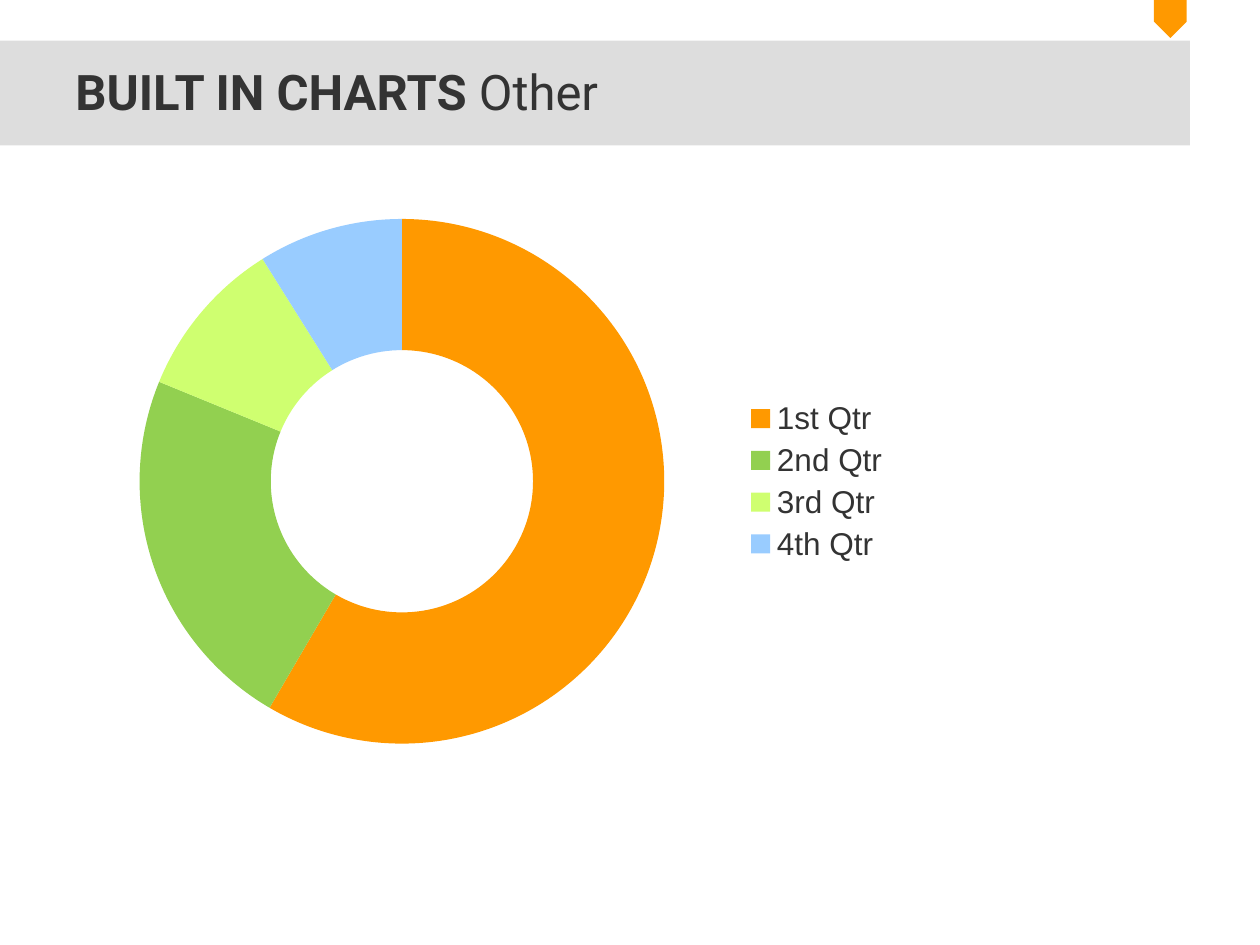
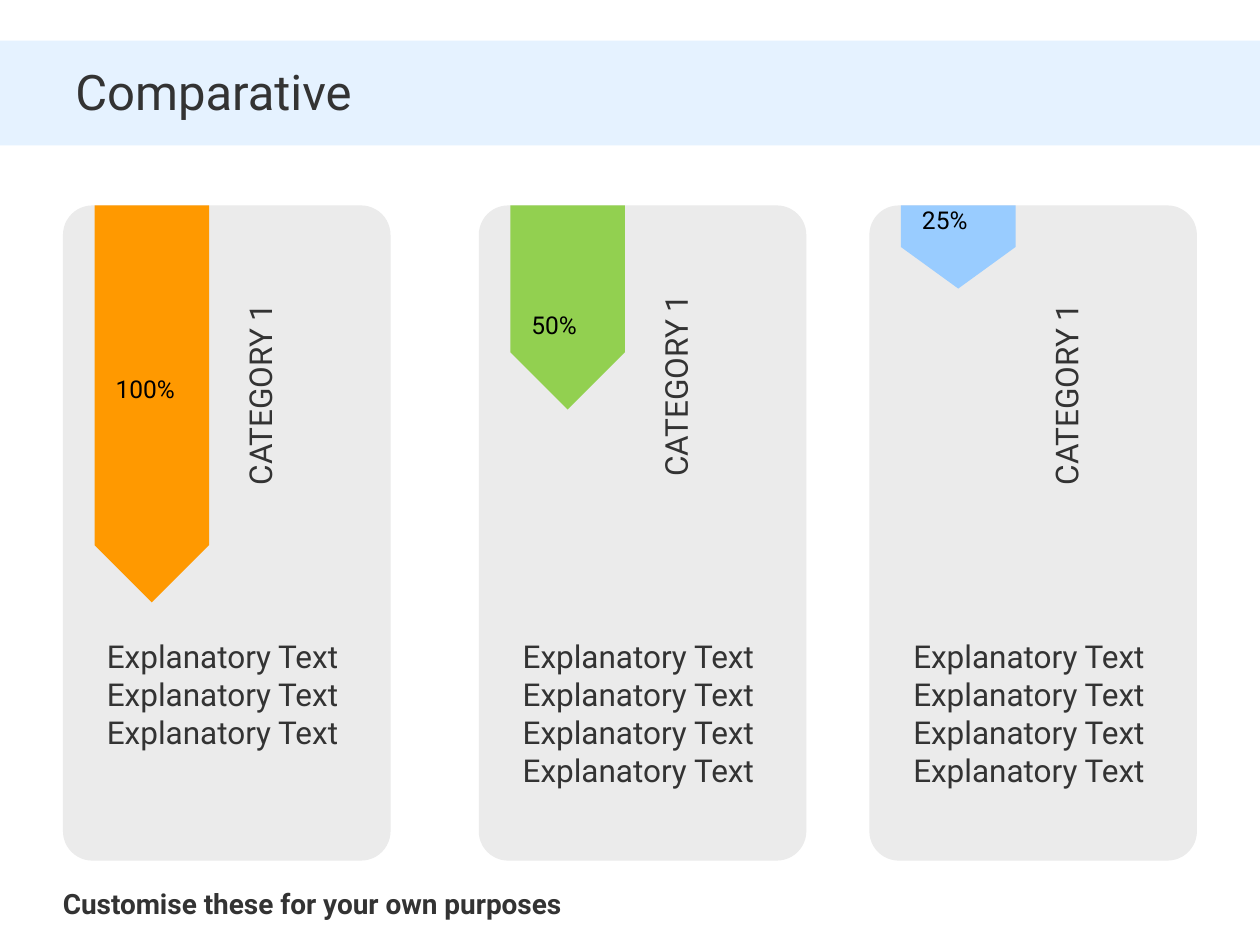
from dataclasses import dataclass

import pptx
import pptx.chart.data
import pptx.dml.color
import pptx.enum.chart
import pptx.enum.shapes
import pptx.oxml.ns
import pptx.util
from lxml import etree

Pt = pptx.util.Pt
SHAPE = pptx.enum.shapes.MSO_SHAPE

COLORS = {
    "text": "333333",
    "label": "000000",
    "band": "DDDDDD",
    "card": "EBEBEB",
    "orange": "FF9900",
    "green": "92D050",
    "lime": "CFFF70",
    "blue": "99CCFF",
}
FORMATS = {
    "title": {"name": "Roboto", "size": Pt(28)},
    "body": {"name": "Roboto", "size": Pt(18)},
    "percent": {"name": "Roboto", "size": Pt(14)},
    "note": {"name": "Roboto", "size": Pt(16), "bold": True},
    "legend": {"name": "Arial", "size": Pt(18)},
}
SLIDE_W, SLIDE_H = 720, 540
CARD_TOP, CARD_W, CARD_H = 117.4, 187.2, 374.4
ARROW_W = 65.5
EXPLANATION = "Explanatory Text"


@dataclass
class Box:
    x: float
    y: float
    w: float
    h: float

    def lengths(self) -> list:
        return [Pt(v) for v in (self.x, self.y, self.w, self.h)]


@dataclass
class Run:
    text: str
    bold: bool = False


@dataclass
class Card:
    x: float
    percent: str
    percent_y: float
    category_y: float
    arrow_len: float
    color: str
    lines: list[str]


@dataclass
class Slice:
    name: str
    value: float
    color: str


CARDS = [
    Card(36, "100%", 210.2, 182.2, 226.8, "orange", [EXPLANATION] * 3),
    Card(273.6, "50%", 173.5, 177.1, 116.6, "green",
         [f"{EXPLANATION} {EXPLANATION}", EXPLANATION, EXPLANATION]),
    Card(496.8, "25%", 113.8, 182.2, 47.5, "blue",
         [f"{EXPLANATION} {EXPLANATION}", EXPLANATION, EXPLANATION]),
]
SLICES = [
    Slice("1st Qtr", 59, "orange"),
    Slice("2nd Qtr", 23, "green"),
    Slice("3rd Qtr", 10, "lime"),
    Slice("4th Qtr", 9, "blue"),
]


def rgb(color: str) -> pptx.dml.color.RGBColor:
    return pptx.dml.color.RGBColor.from_string(COLORS[color])


def format_font(font, style: str, color: str = "text") -> None:
    for key, value in FORMATS[style].items():
        setattr(font, key, value)
    font.color.rgb = rgb(color)


def add_filled(s, kind, box: Box, color: str):
    sp = s.shapes.add_shape(kind, *box.lengths())
    sp.shadow.inherit = False
    sp.fill.solid()
    sp.fill.fore_color.rgb = rgb(color)
    sp.line.fill.background()
    return sp


def add_down_arrow(s, x: float, y: float, width: float, length: float, color: str) -> None:
    box = Box(x + (width - length) / 2, y + (length - width) / 2, length, width)
    add_filled(s, SHAPE.PENTAGON, box, color).rotation = 90


def add_text(s, box: Box, lines: list[str], style: str, color: str = "text"):
    sp = s.shapes.add_textbox(*box.lengths())
    tf = sp.text_frame
    tf.word_wrap = True
    for i, line in enumerate(lines):
        p = tf.paragraphs[0] if i == 0 else tf.add_paragraph()
        r = p.add_run()
        r.text = line
        format_font(r.font, style, color)
    return sp


def add_header(s, runs: list[Run], width: float, color: str, alpha: int = 100) -> None:
    band = add_filled(s, SHAPE.RECTANGLE, Box(0, 23.3, width, 59.8), color)
    if alpha < 100:
        clr = band.fill._xPr.find(".//" + pptx.oxml.ns.qn("a:srgbClr"))
        etree.SubElement(clr, pptx.oxml.ns.qn("a:alpha"), val=str(alpha * 1000))
    sp = s.shapes.add_textbox(*Box(36, 31.7, 648, 80).lengths())
    tf = sp.text_frame
    tf.word_wrap = True
    for run in runs:
        r = tf.paragraphs[0].add_run()
        r.text = run.text
        format_font(r.font, "title")
        r.font.bold = run.bold


def add_doughnut(s, box: Box, slices: list[Slice]) -> None:
    data = pptx.chart.data.CategoryChartData()
    data.categories = [item.name for item in slices]
    data.add_series("Series 1", [item.value for item in slices])
    chart = s.shapes.add_chart(
        pptx.enum.chart.XL_CHART_TYPE.DOUGHNUT, *box.lengths(), data).chart
    chart.has_title = False
    chart.has_legend = True
    chart.legend.position = pptx.enum.chart.XL_LEGEND_POSITION.RIGHT
    chart.legend.include_in_layout = False
    format_font(chart.font, "legend")
    plot = chart.plots[0]
    plot.vary_by_categories = True
    for i, item in enumerate(slices):
        fmt = plot.series[0].points[i].format
        fmt.fill.solid()
        fmt.fill.fore_color.rgb = rgb(item.color)
        fmt.line.fill.background()


def add_card(s, card: Card) -> None:
    panel = add_filled(s, SHAPE.ROUNDED_RECTANGLE,
                       Box(card.x, CARD_TOP, CARD_W, CARD_H), "card")
    panel.adjustments[0] = 0.09
    add_down_arrow(s, card.x + 18, CARD_TOP, ARROW_W, card.arrow_len, card.color)
    add_text(s, Box(card.x + 18, 360.7, 153.4, 116.6), card.lines, "body")
    category = add_text(s, Box(card.x + 46.8, card.category_y, 153.4, 51.1),
                        ["CATEGORY 1"], "body")
    category.rotation = 270
    add_text(s, Box(card.x + 23, card.percent_y, 60.5, 24.5),
             [card.percent], "percent", "label")


def build_chart_slide(prs) -> None:
    s = prs.slides.add_slide(prs.slide_layouts[6])
    add_header(s, [Run("BUILT IN CHARTS ", True), Run("Other")], 680, "band")
    add_doughnut(s, Box(36, 115.2, 480, 319.7), SLICES)
    add_down_arrow(s, 659.4, -4.2, 18.7, 25.9, "orange")


def build_comparison_slide(prs) -> None:
    s = prs.slides.add_slide(prs.slide_layouts[6])
    add_header(s, [Run("Comparative")], SLIDE_W, "blue", 25)
    for card in CARDS:
        add_card(s, card)
    add_text(s, Box(28.8, 503.3, 566, 36), ["Customise these for your own purposes"], "note")


def main() -> None:
    prs = pptx.Presentation()
    prs.slide_width, prs.slide_height = Pt(SLIDE_W), Pt(SLIDE_H)
    build_chart_slide(prs)
    build_comparison_slide(prs)
    prs.save("out.pptx")


if __name__ == "__main__":
    main()
